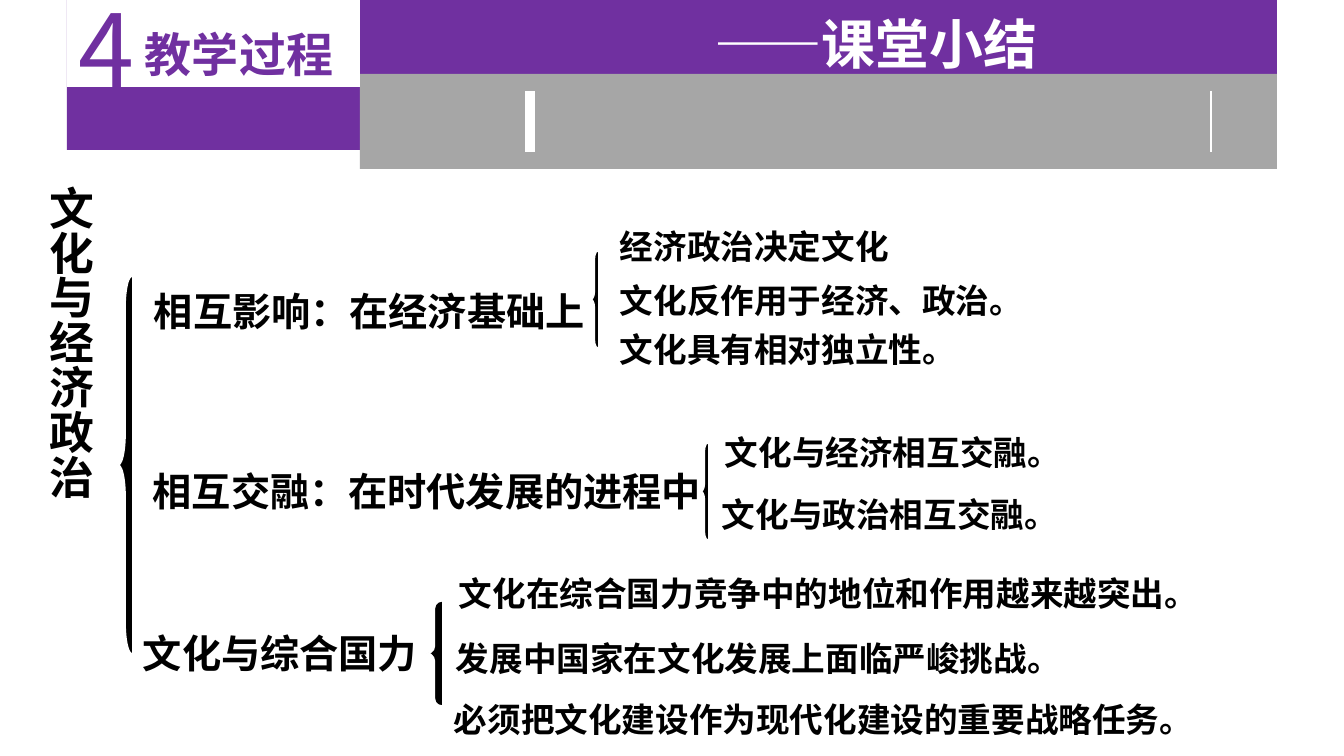
from dataclasses import dataclass

from lxml import etree
from pptx import Presentation
from pptx import util as u
from pptx.dml.color import RGBColor
from pptx.enum import shapes, text
from pptx.oxml.ns import qn

EMU_PER_PX = 914400 / 100.8


@dataclass(frozen=True)
class Theme:
    purple: str = "7030A0"
    gray: str = "A6A6A6"
    white: str = "FFFFFF"
    black: str = "000000"
    heading_font: str = "Noto Sans CJK SC"
    detail_font: str = "Arial"
    number_size: float = 72
    title_size: float = 38.4
    section_size: float = 33.6
    topic_size: float = 32
    branch_size: float = 28
    detail_size: float = 24


THEME = Theme()

BRANCHES = [
    ("相互影响：在经济基础上", (144, 282, 481, 57), (591, 251, 7, 97), 1.14, 1, [
        ("经济政治决定文化", 610, 221, 715),
        ("文化反作用于经济、政治。", 610, 275, 715),
        ("文化具有相对独立性。", 610, 324, 656),
    ]),
    ("相互交融：在时代发展的进程中", (143, 462, 616, 57), (701, 443, 7, 97), 1.14, 1, [
        ("文化与经济相互交融。", 715, 427, 594),
        ("文化与政治相互交融。", 712, 489, 594),
    ]),
    ("文化与综合国力", (133, 624, 376, 57), (427, 601, 15, 105), 0.5, 1, [
        ("文化在综合国力竞争中的地位和作用越来越突出。", 449, 568, 860),
        ("发展中国家在文化发展上面临严峻挑战。", 446, 633, 861),
        ("必须把文化建设作为现代化建设的重要战略任务。", 444, 694, 863),
    ]),
]


def px(n):
    return u.Emu(round(n * EMU_PER_PX))


def box(*lengths):
    return [px(n) for n in lengths]


def rgb(color):
    return RGBColor.from_string(color)


def write(sp, words, size, color=THEME.black, font=THEME.heading_font, bold=True,
          align=None, anchor=text.MSO_ANCHOR.TOP, spacing=None, wrap=True):
    tf = sp.text_frame
    tf.word_wrap = wrap
    tf.auto_size = text.MSO_AUTO_SIZE.SHAPE_TO_FIT_TEXT
    tf.vertical_anchor = anchor
    p = tf.paragraphs[0]
    p.alignment = align
    p.line_spacing = spacing
    r = p.add_run()
    r.text = words
    r.font.name = font
    r.font.size = u.Pt(size)
    r.font.bold = bold
    r.font.color.rgb = rgb(color)
    ea = etree.Element(qn("a:ea"), typeface=THEME.heading_font)
    r.font._element.find(qn("a:latin")).addnext(ea)
    return tf


def add_label(slide, words, place, size, **fmt):
    sp = slide.shapes.add_textbox(*box(*place))
    return write(sp, words, size, **fmt)


def add_block(slide, place, color, kind=shapes.MSO_SHAPE.RECTANGLE):
    sp = slide.shapes.add_shape(kind, *box(*place))
    sp.shadow.inherit = False
    sp.fill.solid()
    sp.fill.fore_color.rgb = rgb(color)
    sp.line.fill.background()
    return sp


def add_brace(slide, place, curve, width):
    sp = add_block(slide, place, THEME.black, shapes.MSO_SHAPE.LEFT_BRACE)
    sp.adjustments[0] = curve
    sp.adjustments[1] = 0.5
    sp.line.color.rgb = rgb(THEME.white)
    sp.line.width = u.Pt(width)


def add_divider(slide, x, width):
    line = slide.shapes.add_connector(
        shapes.MSO_CONNECTOR.STRAIGHT, *box(x, 91, x, 152))
    line.line.color.rgb = rgb(THEME.white)
    line.line.width = u.Pt(width)
    etree.SubElement(line._element.spPr, qn("a:effectLst"))


def add_header(slide):
    add_block(slide, (67, -3, 1210, 153), THEME.purple)
    add_block(slide, (360, 74, 917, 95), THEME.gray)
    add_divider(slide, 530, 6.5)
    add_divider(slide, 1211, 1.5)
    section = add_block(slide, (67, -8, 293, 95), THEME.white)
    tf = write(section, "教学过程", THEME.section_size, color=THEME.purple,
               align=text.PP_ALIGN.CENTER, anchor=text.MSO_ANCHOR.BOTTOM, spacing=1.5)
    tf.margin_left = px(61)
    add_label(slide, "4", (69, -18, 71, 132), THEME.number_size,
              color=THEME.purple, bold=False, wrap=False)
    title = slide.shapes.title
    title.left, title.top, title.width, title.height = box(631, 6, 489, 76)
    write(title, "——课堂小结", THEME.title_size, color=THEME.white,
          align=text.PP_ALIGN.CENTER)
    slide.shapes._spTree.append(title._element)


def add_branch(slide, heading, place, brace, curve, width, details):
    add_label(slide, heading, place, THEME.branch_size)
    add_brace(slide, brace, curve, width)
    for words, x, y, w in details:
        add_label(slide, words, (x, y, w, 50), THEME.detail_size,
                  font=THEME.detail_font)


def add_topic(slide):
    tf = add_label(slide, "文化与经济政治", (27, 176, 75, 506), THEME.topic_size,
                   align=text.PP_ALIGN.CENTER)
    tf._txBody.bodyPr.set("vert", "eaVert")
    add_brace(slide, (118, 276, 14, 378), 2.2, 1.25)


def main():
    prs = Presentation()
    prs.slide_width, prs.slide_height = box(1344, 756)
    slide = prs.slides.add_slide(prs.slide_layouts[5])
    add_topic(slide)
    for branch in BRANCHES:
        add_branch(slide, *branch)
    add_header(slide)
    prs.save("out.pptx")


if __name__ == "__main__":
    main()
